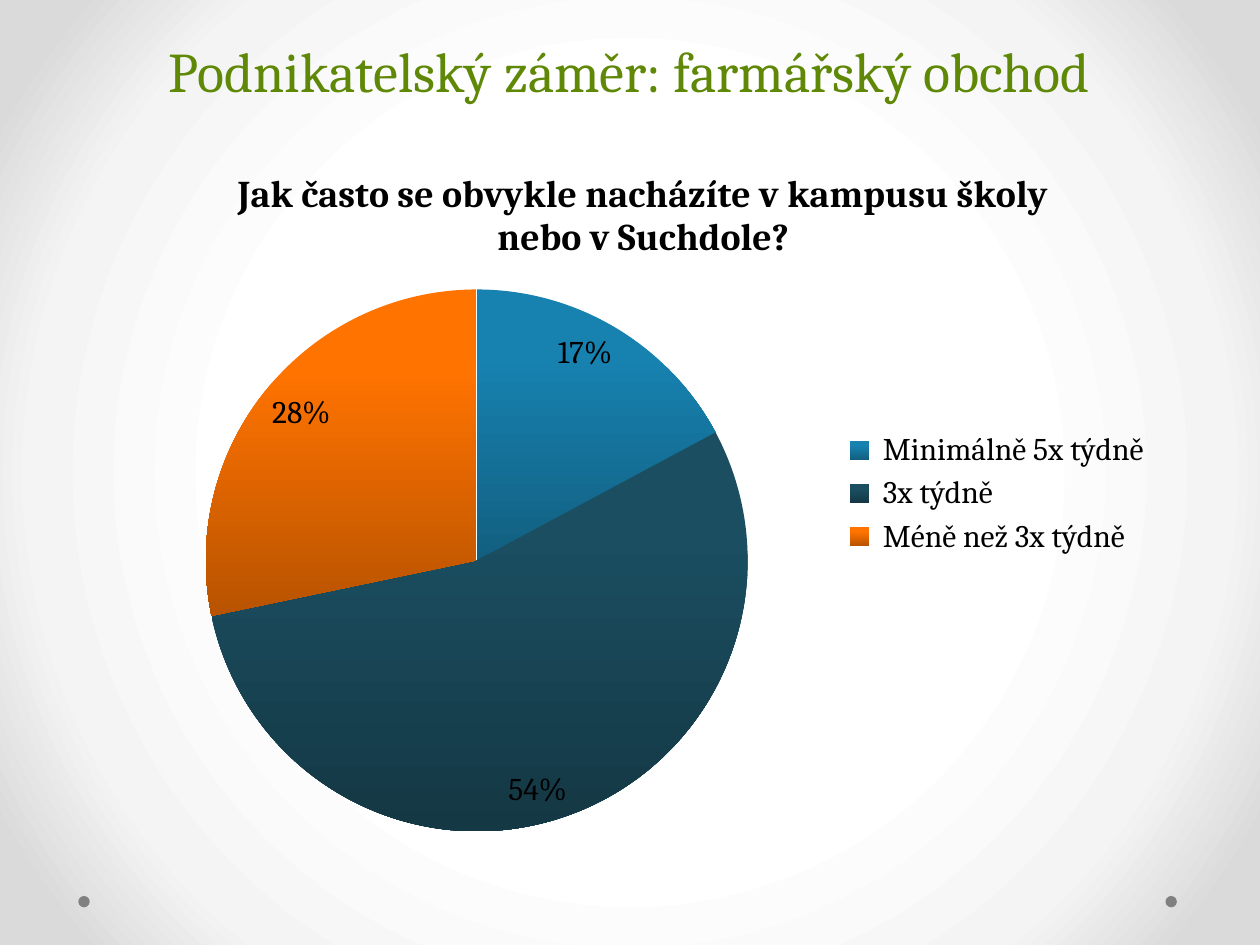
from lxml import etree
from pptx import Presentation
from pptx.chart.data import CategoryChartData
from pptx.dml.color import RGBColor
from pptx.enum.chart import XL_CHART_TYPE, XL_LABEL_POSITION, XL_LEGEND_POSITION
from pptx.enum.shapes import MSO_SHAPE
from pptx.enum.text import MSO_ANCHOR, PP_ALIGN
from pptx.oxml import parse_xml
from pptx.oxml.ns import nsdecls, qn
from pptx.util import Pt

PIE = XL_CHART_TYPE.PIE
INSIDE_END = XL_LABEL_POSITION.INSIDE_END
LEGEND_RIGHT = XL_LEGEND_POSITION.RIGHT
ELLIPSE = MSO_SHAPE.OVAL
BOTTOM = MSO_ANCHOR.BOTTOM
CENTER = PP_ALIGN.CENTER

FONT = "Cambria"
COLORS = {
    "title": "5E8805",
    "text": "000000",
    "dot": "808080",
    "blue": "1782B0",
    "blue_dark": "125F80",
    "teal": "1B4E61",
    "teal_dark": "143844",
    "orange": "FF7300",
    "orange_dark": "B85300",
}
BACKGROUND_STOPS = [(50, "FFFFFF"), (76, "F4F4F4"), (92, "DADADA")]
QUESTION = "Jak často se obvykle nacházíte v kampusu školy nebo v Suchdole?"
ANSWERS = [
    (" Minimálně 5x týdně", 17, "blue"),
    (" 3x týdně", 54, "teal"),
    (" Méně než 3x týdně", 28, "orange"),
]


def color(name):
    """Return the named colour."""
    return RGBColor.from_string(COLORS[name])


def style_font(font, size, color_name, bold=False):
    """Set typeface, size, weight and colour of a font."""
    font.name = FONT
    font.size = Pt(size)
    font.bold = bold
    font.color.rgb = color(color_name)


def set_background(slide):
    """Fill the background with a gradient spreading from the centre."""
    fill = slide.background.fill
    fill.gradient()
    stops = "".join(
        f'<a:gs pos="{position * 1000}"><a:srgbClr val="{value}"/></a:gs>'
        for position, value in BACKGROUND_STOPS
    )
    gradient = parse_xml(
        f'<a:gradFill {nsdecls("a")} rotWithShape="1"><a:gsLst>{stops}</a:gsLst>'
        '<a:path path="circle"><a:fillToRect l="50000" t="50000" r="50000" b="50000"/>'
        "</a:path></a:gradFill>"
    )
    previous = next(slide.background._cSld.iter(qn("a:gradFill")))
    previous.getparent().replace(previous, gradient)


def add_dot(slide, left):
    """Add a small grey dot near the bottom edge."""
    shape = slide.shapes.add_shape(ELLIPSE, Pt(left), Pt(512), Pt(6.5), Pt(6.5))
    shape.shadow.inherit = False
    shape.fill.solid()
    shape.fill.fore_color.rgb = color("dot")
    shape.line.fill.background()


def add_title(slide, text):
    """Add the centred slide title."""
    shape = slide.shapes.add_textbox(Pt(36), Pt(-63), Pt(648), Pt(126))
    frame = shape.text_frame
    frame.word_wrap = True
    frame.vertical_anchor = BOTTOM
    paragraph = frame.paragraphs[0]
    paragraph.alignment = CENTER
    paragraph.line_spacing = Pt(58)
    run = paragraph.add_run()
    run.text = text
    style_font(run.font, 32, "title")


def set_layout(plot_area, **fractions):
    """Place the inner plot area by fractions of the chart size."""
    for previous in plot_area.findall(qn("c:layout")):
        plot_area.remove(previous)
    layout = etree.Element(qn("c:layout"))
    manual = etree.SubElement(layout, qn("c:manualLayout"))
    settings = {"layoutTarget": "inner", "xMode": "edge", "yMode": "edge", **fractions}
    for name, value in settings.items():
        etree.SubElement(manual, qn(f"c:{name}")).set("val", str(value))
    plot_area.insert(0, layout)


def shade_slice(point, color_name):
    """Shade a pie slice from its colour down to the dark variant."""
    fill = point.format.fill
    fill.gradient()
    fill.gradient_angle = 270
    first, last = fill.gradient_stops
    first.position, last.position = 0.25, 1
    first.color.rgb = color(color_name)
    last.color.rgb = color(f"{color_name}_dark")
    point.format.line.fill.background()


def add_pie(slide):
    """Add the pie chart with its title, legend and labels."""
    data = CategoryChartData()
    data.categories = [answer for answer, _, _ in ANSWERS]
    data.add_series(QUESTION, [share for _, share, _ in ANSWERS])
    frame = slide.shapes.add_chart(PIE, Pt(70), Pt(80.5), Pt(595.5), Pt(403), data)
    chart = frame.chart
    style_font(chart.font, 18, "text")

    chart.has_title = True
    run = chart.chart_title.text_frame.paragraphs[0].add_run()
    run.text = QUESTION
    style_font(run.font, 21.6, "text", bold=True)
    chart.chart_title.include_in_layout = False

    chart.has_legend = True
    chart.legend.position = LEGEND_RIGHT
    chart.legend.include_in_layout = False
    style_font(chart.legend.font, 18, "text")

    plot = chart.plots[0]
    plot.vary_by_categories = True
    plot.has_data_labels = True
    labels = plot.data_labels
    labels.show_value = True
    labels.show_percentage = False
    labels.number_format = '0"%"'
    labels.number_format_is_linked = False
    labels.position = INSIDE_END
    style_font(labels.font, 18, "text")
    for index, (_, _, color_name) in enumerate(ANSWERS):
        shade_slice(plot.series[0].points[index], color_name)
    plot_area = next(chart.element.iter(qn("c:plotArea")))
    set_layout(plot_area, x=0.08, y=0.21, w=0.52, h=0.77)


def main():
    """Build and save the slide."""
    presentation = Presentation()
    presentation.slide_width = Pt(720)
    presentation.slide_height = Pt(540)
    slide = presentation.slides.add_slide(presentation.slide_layouts[6])
    set_background(slide)
    for left in (666, 44.75):
        add_dot(slide, left)
    add_title(slide, "Podnikatelský záměr: farmářský obchod")
    add_pie(slide)
    presentation.save("out.pptx")


if __name__ == "__main__":
    main()
